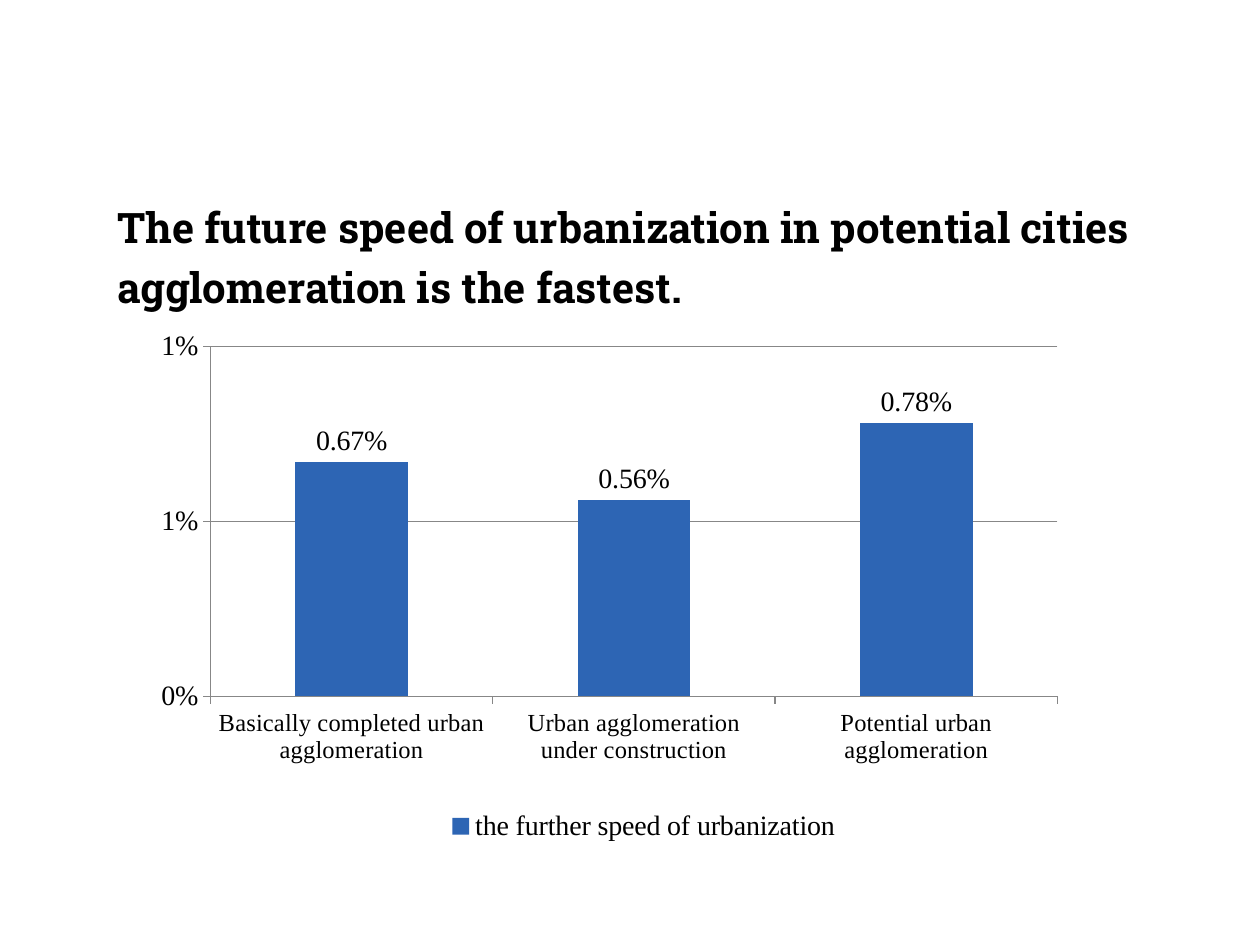
from dataclasses import dataclass
from lxml.etree import SubElement
from pptx import Presentation
from pptx.chart.data import CategoryChartData
from pptx.dml.color import RGBColor
from pptx.enum.chart import XL_CHART_TYPE, XL_LABEL_POSITION, XL_LEGEND_POSITION, XL_TICK_MARK
from pptx.enum.text import MSO_ANCHOR, MSO_AUTO_SIZE, PP_ALIGN
from pptx.oxml.ns import qn
from pptx.util import Pt


@dataclass
class Theme:
    ink: RGBColor = RGBColor(0, 0, 0)
    bar: RGBColor = RGBColor(0x2D, 0x65, 0xB4)
    rule: RGBColor = RGBColor(0x87, 0x87, 0x87)
    head: str = "Roboto Slab"
    body: str = "Times New Roman"
    title: int = 24
    label: int = 16
    group: int = 14


theme = Theme()


def style(font, size, name=theme.body, bold=False):
    font.name = name
    font.size = Pt(size)
    font.bold = bold
    font.color.rgb = theme.ink


def place(part, x, y, w, h, inner=False):
    for old in part.findall(qn("c:layout")):
        part.remove(old)
    frame = SubElement(part, qn("c:layout"))
    part.remove(frame)
    part.insert(1 if part.tag == qn("c:legend") else 0, frame)
    manual = SubElement(frame, qn("c:manualLayout"))
    rules = [("layoutTarget", "inner")] if inner else []
    rules += [("xMode", "edge"), ("yMode", "edge"), ("x", x), ("y", y), ("w", w), ("h", h)]
    for tag, val in rules:
        SubElement(manual, qn("c:" + tag)).set("val", str(val))


deck = Presentation()
deck.slide_width, deck.slide_height = Pt(720), Pt(540)
slide = deck.slides.add_slide(deck.slide_layouts[5])

title = slide.shapes.title
title.left, title.top, title.width, title.height = Pt(59.8), Pt(105.8), Pt(612), Pt(77)
text = title.text_frame
text.word_wrap = True
text.auto_size = MSO_AUTO_SIZE.NONE
text.vertical_anchor = MSO_ANCHOR.TOP
para = text.paragraphs[0]
para.alignment = PP_ALIGN.LEFT
para.line_spacing = 1.2
run = para.add_run()
run.text = "The future speed of urbanization in potential cities agglomeration is the fastest."
style(run.font, theme.title, theme.head, True)

data = CategoryChartData(number_format="0.00%")
data.categories = [
    "Basically completed urban agglomeration",
    "Urban agglomeration under construction",
    "Potential urban agglomeration",
]
data.add_series("the further speed of urbanization", [0.0067, 0.0056, 0.0078])
chart = slide.shapes.add_chart(
    XL_CHART_TYPE.COLUMN_CLUSTERED, Pt(76.3), Pt(182.9), Pt(550), Pt(303), data
).chart
chart.has_title = False
style(chart.font, theme.label)

plot = chart.plots[0]
plot.gap_width = 150
plot.vary_by_categories = False
bars = plot.series[0]
bars.format.fill.solid()
bars.format.fill.fore_color.rgb = theme.bar
tags = bars.data_labels
tags.show_value = True
tags.number_format = "0.00%"
tags.number_format_is_linked = False
tags.position = XL_LABEL_POSITION.OUTSIDE_END
style(tags.font, theme.label)

cats, vals = chart.category_axis, chart.value_axis
for axis, size in ((cats, theme.group), (vals, theme.label)):
    style(axis.tick_labels.font, size)
    axis.major_tick_mark = XL_TICK_MARK.OUTSIDE
    axis.minor_tick_mark = XL_TICK_MARK.NONE
    axis.format.line.color.rgb = theme.rule
    axis.format.line.width = Pt(0.75)
vals.minimum_scale, vals.maximum_scale, vals.major_unit = 0, 0.01, 0.005
vals.tick_labels.number_format = "0%"
vals.tick_labels.number_format_is_linked = False
vals.has_major_gridlines = True
vals.major_gridlines.format.line.color.rgb = theme.rule
vals.major_gridlines.format.line.width = Pt(0.75)

chart.has_legend = True
legend = chart.legend
legend.position = XL_LEGEND_POSITION.RIGHT
legend.include_in_layout = False
style(legend.font, theme.label)
place(chart.element.find(".//" + qn("c:plotArea")), 0.08, 0.05, 0.88, 0.66, True)
place(chart.element.find(".//" + qn("c:legend")), 0.32, 0.91, 0.42, 0.09)

deck.save("out.pptx")
